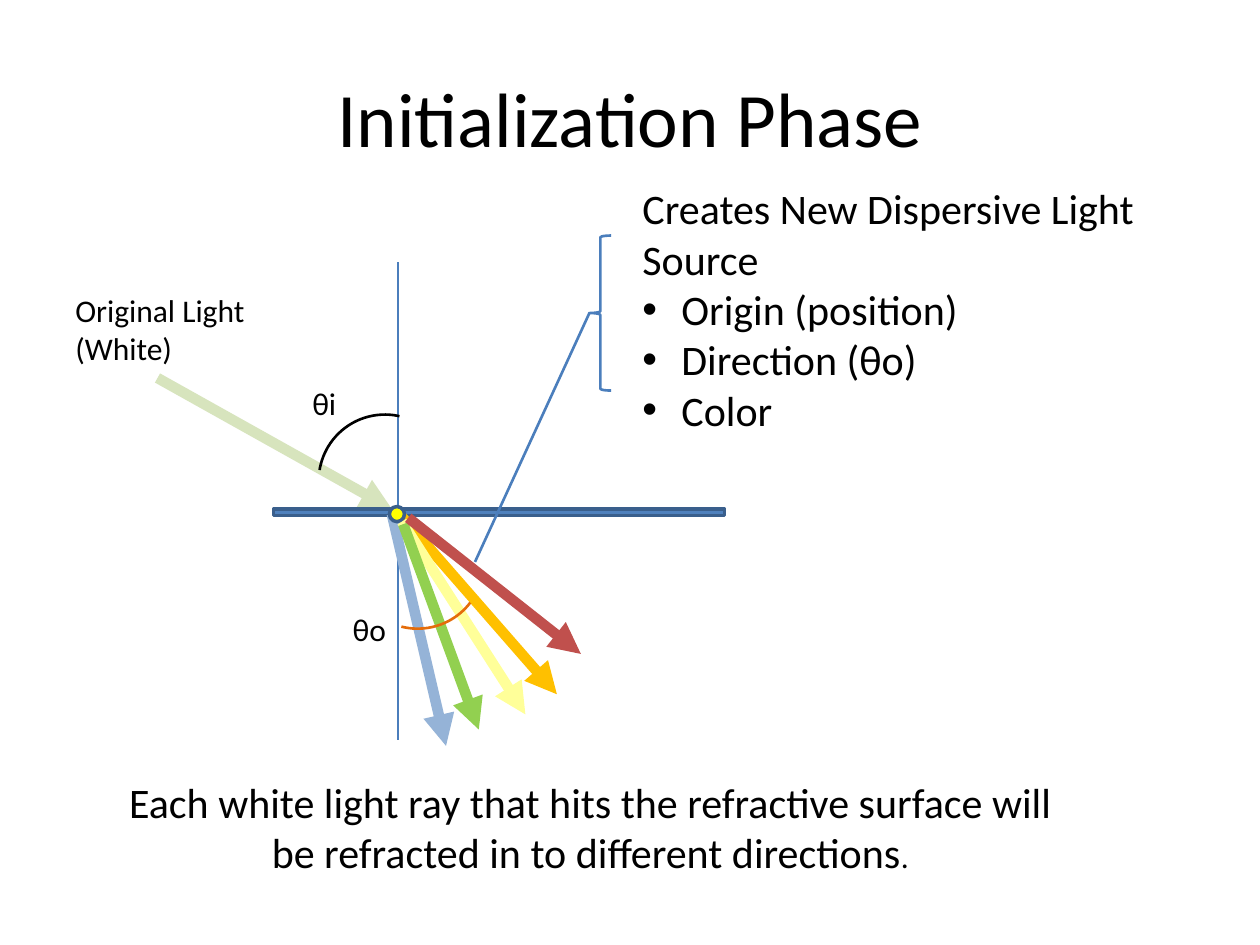
from pptx import Presentation
from pptx.dml.color import RGBColor
from pptx.enum.shapes import MSO_CONNECTOR, MSO_SHAPE
from pptx.enum.text import MSO_ANCHOR, PP_ALIGN
from pptx.oxml.ns import qn
from pptx.util import Inches, Pt
from lxml import etree

LINE = MSO_CONNECTOR.STRAIGHT
RECT, OVAL = MSO_SHAPE.RECTANGLE, MSO_SHAPE.OVAL
BRACE, ARC = MSO_SHAPE.LEFT_BRACE, MSO_SHAPE.ARC
LEFT, CENTER = PP_ALIGN.LEFT, PP_ALIGN.CENTER
MIDDLE, TOP = MSO_ANCHOR.MIDDLE, MSO_ANCHOR.TOP

COLS, ROWS = 100, 75
BLUE, EDGE, BLACK = "4B7EBC", "3A5F8C", "000000"

NORMAL = (31.6, 20.8, 31.6, 58.7)
LEADER = (37.7, 44.6, 46.8, 24.8)
WHITE_RAY = (12.5, 30, 31.1, 40.4, "D7E4BD")
BACK_RAYS = [
    (31.8, 40.9, 44.2, 55.1, "FFC000"),
    (31.1, 40.8, 35.4, 59.2, "95B3D7"),
]
FRONT_RAYS = [
    (31.9, 41.4, 41.7, 56.7, "FFFF99"),
    (32, 41.6, 38, 57.9, "92D050"),
    (32.4, 41.1, 46.1, 51.9, "C0504D"),
]
SURFACE = (21.7, 40.4, 35.8, 0.5)
HIT = (30.9, 40.2, 1.2, 1.2)
BRACKET = (46.8, 18.7, 1.7, 12.3)
ANGLES = [
    ((25.3, 32.9, 10.5, 10.5), 300.7, (149.15, 205.25), BLACK),
    ((27.9, 39.4, 10.5, 10.5), 122.2, (165.08, 205.26), "E46C0A"),
]
TITLE = ["Initialization Phase"]
NOTES = ["Creates New Dispersive Light Source", "• Origin (position)",
         "• Direction (θo)", "• Color"]
LABELS = [
    ((5, 22.6, 18.3, 7.1), ["Original Light", "(White)"]),
    ((23.8, 30, 4.2, 4), ["θi"]),
    ((27, 47.9, 5.5, 4), ["θo"]),
]
CAPTION = ["Each white light ray that hits the refractive surface will",
           "be refracted in to different directions"]

deck = Presentation()
deck.slide_width, deck.slide_height = Inches(10), Inches(7.5)
slide = deck.slides.add_slide(deck.slide_layouts[6])
shapes = slide.shapes


def place(box):
    col, row = deck.slide_width / COLS, deck.slide_height / ROWS
    return [round(v * unit) for v, unit in zip(box, (col, row, col, row))]


def color(text):
    return RGBColor.from_string(text)


def stroke(item, tint, width):
    item.line.color.rgb = color(tint)
    item.line.width = Pt(width)


def add_line(ends, tint, width, arrow=False):
    item = shapes.add_connector(LINE, *place(ends))
    stroke(item, tint, width)
    props = item._element.spPr
    if arrow:
        etree.SubElement(props.find(qn("a:ln")), qn("a:tailEnd"), type="triangle")
    etree.SubElement(props, qn("a:effectLst"))


def add_rays(rays):
    for *ends, tint in rays:
        add_line(ends, tint, 6, True)


def add_form(kind, box, tint, width, fill=None):
    item = shapes.add_shape(kind, *place(box))
    item.shadow.inherit = False
    stroke(item, tint, width)
    if fill:
        item.fill.solid()
        item.fill.fore_color.rgb = color(fill)
    else:
        item.fill.background()
    return item


def style(run, size):
    run.font.name = "Calibri"
    run.font.size = Pt(size)
    run.font.color.rgb = color(BLACK)


def add_text(box, lines, size, align=LEFT, anchor=TOP, wrap=True):
    frame = shapes.add_textbox(*place(box)).text_frame
    frame.word_wrap = wrap
    frame.vertical_anchor = anchor
    frame.text = "\n".join(line.removeprefix("• ") for line in lines)
    for line, para in zip(lines, frame.paragraphs):
        para.alignment = align
        style(para.runs[0], size)
        if line.startswith("•"):
            props = para._p.get_or_add_pPr()
            props.set("marL", str(Inches(0.31)))
            props.set("indent", str(-Inches(0.31)))
            etree.SubElement(props, qn("a:buFont"), typeface="Arial")
            etree.SubElement(props, qn("a:buChar"), char="•")
    return frame


add_line(NORMAL, BLUE, 0.75)
add_text((5, 3, 90, 12.5), TITLE, 44, CENTER, MIDDLE)
add_rays([WHITE_RAY])
add_form(RECT, SURFACE, EDGE, 2, "4F81BD")
add_rays(BACK_RAYS)
add_form(OVAL, HIT, EDGE, 2, "FFFF00")
add_rays(FRONT_RAYS)
add_form(BRACE, BRACKET, BLUE, 1.5)
add_line(LEADER, BLUE, 1.5)
for box, turn, span, tint in ANGLES:
    arc = add_form(ARC, box, tint, 1.5)
    arc.rotation = turn
    arc.adjustments[0], arc.adjustments[1] = span

add_text((50, 14, 45.8, 25.2), NOTES, 24)
for box, lines in LABELS:
    add_text(box, lines, 18)
caption = add_text((8.5, 61.1, 76.7, 9.1), CAPTION, 24, CENTER, wrap=False)
stop = caption.paragraphs[-1].add_run()
stop.text = "."
style(stop, 18)

deck.save("out.pptx")
